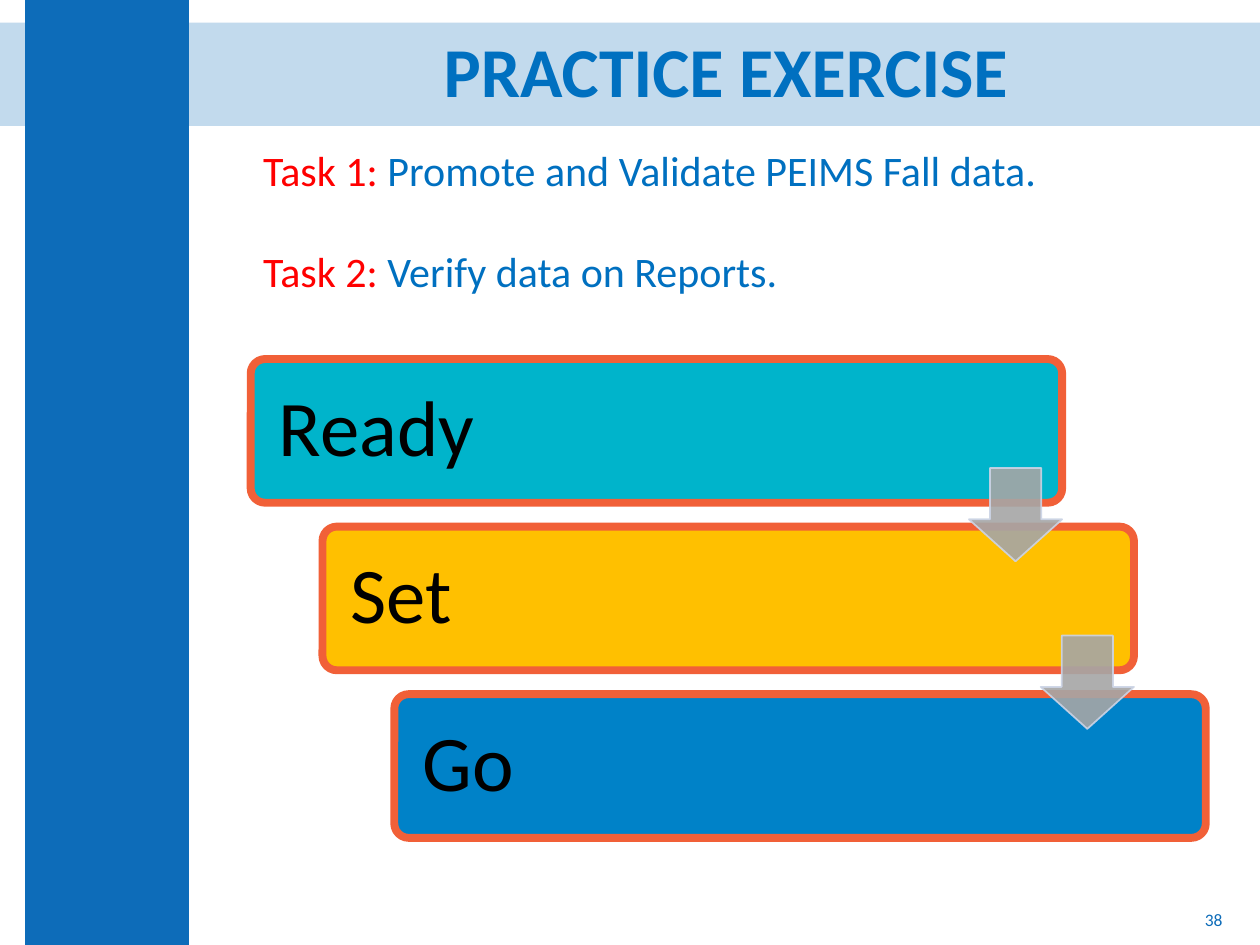
import pptx
import pptx.util
import pptx.dml.color
import pptx.enum.shapes
import pptx.enum.text
import pptx.oxml.ns
from lxml import etree

Inches, Pt = pptx.util.Inches, pptx.util.Pt
RGB = pptx.dml.color.RGBColor
KIND = pptx.enum.shapes.MSO_SHAPE
ALIGN = pptx.enum.text.PP_ALIGN
MIDDLE = pptx.enum.text.MSO_ANCHOR.MIDDLE

NAVY = RGB(0x0D, 0x6C, 0xB9)
BLUE = RGB(0x00, 0x70, 0xC0)
RED = RGB(0xFF, 0x00, 0x00)
BLACK = RGB(0x00, 0x00, 0x00)
CORAL = RGB(0xF1, 0x60, 0x38)
GREY = RGB(0xA6, 0xA6, 0xA6)
PALE = RGB(0xCC, 0xD4, 0xE6)
TEAL = RGB(0x00, 0xB4, 0xCB)
GOLD = RGB(0xFF, 0xC0, 0x00)
AZURE = RGB(0x00, 0x82, 0xC8)

TITLE = "PRACTICE EXERCISE"
PAGE = "38"
TASKS = [
    ("Task 1:", " Promote and Validate PEIMS Fall data."),
    ("Task 2:", " Verify data on Reports."),
]
STEPS = [("Ready", TEAL), ("Set", GOLD), ("Go", AZURE)]

LEFT, TOP = 1.99, 2.85
WIDE, HIGH = 6.44, 1.14
SHIFT, DROP = 0.57, 1.33
ARROW = 0.74


def fade(fill, percent):
    """Make a solid fill partly transparent; percent is its opacity."""
    color = fill._xPr.find(".//" + pptx.oxml.ns.qn("a:srgbClr"))
    alpha = etree.SubElement(color, pptx.oxml.ns.qn("a:alpha"))
    alpha.set("val", str(percent * 1000))


def draw(slide, kind, box, color, line=None, width=0, adjust=()):
    shape = slide.shapes.add_shape(kind, *map(Inches, box))
    shape.shadow.inherit = False
    shape.fill.solid()
    shape.fill.fore_color.rgb = color
    if line is None:
        shape.line.fill.background()
    else:
        shape.line.color.rgb = line
        shape.line.width = Pt(width)
    for i, value in enumerate(adjust):
        shape.adjustments[i] = value
    return shape


def write(para, text, size, color, bold=False):
    run = para.add_run()
    run.text = text
    style = {"name": "Calibri", "size": Pt(size), "bold": bold}
    for key, value in style.items():
        setattr(run.font, key, value)
    run.font.color.rgb = color


def label(slide, box):
    frame = slide.shapes.add_textbox(*map(Inches, box)).text_frame
    frame.word_wrap = True
    return frame


def main():
    deck = pptx.Presentation()
    deck.slide_width, deck.slide_height = Inches(10), Inches(7.5)
    slide = deck.slides.add_slide(deck.slide_layouts[6])

    band = draw(slide, KIND.RECTANGLE, (0, 0.18, 10, 0.82), NAVY)
    fade(band.fill, 25)
    draw(slide, KIND.RECTANGLE, (0.2, 0, 1.3, 7.5), NAVY)

    page = label(slide, (7.55, 7.1, 2.25, 0.4))
    page.vertical_anchor = MIDDLE
    page.paragraphs[0].alignment = ALIGN.RIGHT
    write(page.paragraphs[0], PAGE, 10, NAVY)

    title = label(slide, (1.81, 0.18, 7.9, 0.82))
    title.vertical_anchor = MIDDLE
    title.paragraphs[0].alignment = ALIGN.CENTER
    title.paragraphs[0].line_spacing = 0.9
    write(title.paragraphs[0], TITLE, 40, BLUE, True)

    for i, (word, color) in enumerate(STEPS):
        box = (LEFT + i * SHIFT, TOP + i * DROP, WIDE, HIGH)
        step = draw(slide, KIND.ROUNDED_RECTANGLE, box, color, CORAL, 4.5, [0.1])
        frame = step.text_frame
        frame.word_wrap = True
        frame.vertical_anchor = MIDDLE
        for side in ("left", "right", "top", "bottom"):
            setattr(frame, "margin_" + side, Inches(0.19))
        para = frame.paragraphs[0]
        para.alignment = ALIGN.LEFT
        para.line_spacing = 0.9
        write(para, word, 45, BLACK)

    # Each arrow sits at the right end of a step, centred on the gap below it
    for i in range(len(STEPS) - 1):
        x = LEFT + i * SHIFT + WIDE - ARROW
        y = TOP + i * DROP + (HIGH + DROP - ARROW) / 2
        arrow = draw(slide, KIND.DOWN_ARROW, (x, y, ARROW, ARROW),
                     GREY, PALE, 1, [0.55, 0.45])
        fade(arrow.fill, 90)
        fade(arrow.line.fill, 90)

    tasks = label(slide, (LEFT, 1.1, 6.81, 1.41))
    for i, (name, text) in enumerate(TASKS):
        para = tasks.add_paragraph() if i else tasks.paragraphs[0]
        if i:
            para.space_before = Pt(29)
        write(para, name, 24, RED)
        write(para, text, 24, BLUE)

    deck.save("out.pptx")


if __name__ == "__main__":
    main()
